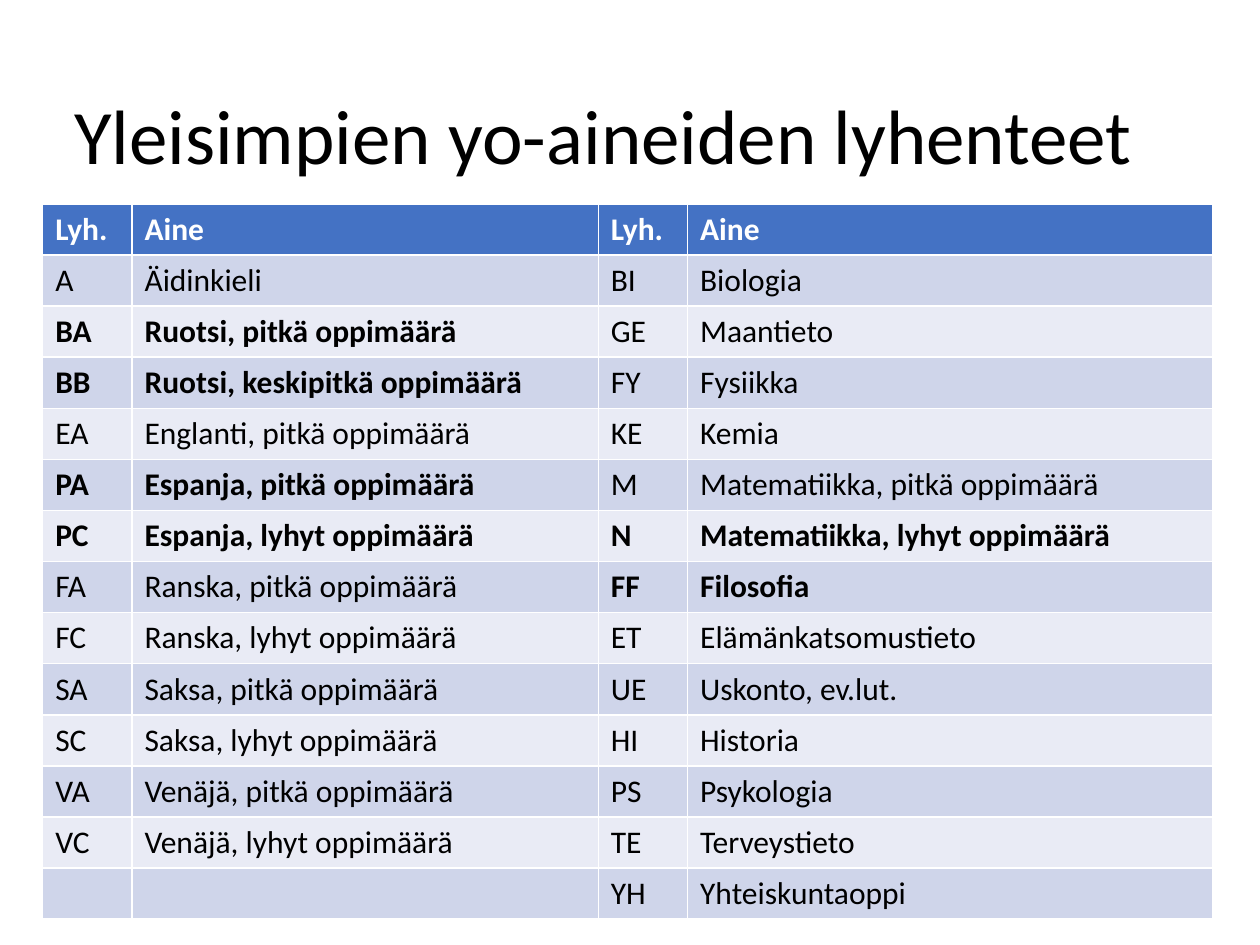
from dataclasses import dataclass

from pptx import Presentation
from pptx.dml.color import RGBColor
from pptx.enum.text import MSO_ANCHOR, MSO_AUTO_SIZE, PP_ALIGN
from pptx.util import Cm, Pt


@dataclass(frozen=True)
class Theme:
    font: str = "Calibri"
    title_size: int = 44
    table_size: int = 18
    text: str = "000000"
    header_text: str = "FFFFFF"
    header_fill: str = "4472C4"
    bands: tuple[str, str] = ("CFD5EA", "E9EBF5")


@dataclass(frozen=True)
class Subject:
    code: str
    name: str
    bold: bool = False


THEME = Theme()
HEADER = Subject("Lyh.", "Aine", True)
COLUMN_WIDTHS = (1.8, 9.4, 1.8, 10.59)
ROW_HEIGHT = 1.03

LANGUAGES = [
    Subject("A", "Äidinkieli"),
    Subject("BA", "Ruotsi, pitkä oppimäärä", True),
    Subject("BB", "Ruotsi, keskipitkä oppimäärä", True),
    Subject("EA", "Englanti, pitkä oppimäärä"),
    Subject("PA", "Espanja, pitkä oppimäärä", True),
    Subject("PC", "Espanja, lyhyt oppimäärä", True),
    Subject("FA", "Ranska, pitkä oppimäärä"),
    Subject("FC", "Ranska, lyhyt oppimäärä"),
    Subject("SA", "Saksa, pitkä oppimäärä"),
    Subject("SC", "Saksa, lyhyt oppimäärä"),
    Subject("VA", "Venäjä, pitkä oppimäärä"),
    Subject("VC", "Venäjä, lyhyt oppimäärä"),
]
SCIENCES = [
    Subject("BI", "Biologia"),
    Subject("GE", "Maantieto"),
    Subject("FY", "Fysiikka"),
    Subject("KE", "Kemia"),
    Subject("M", "Matematiikka, pitkä oppimäärä"),
    Subject("N", "Matematiikka, lyhyt oppimäärä", True),
    Subject("FF", "Filosofia", True),
    Subject("ET", "Elämänkatsomustieto"),
    Subject("UE", "Uskonto, ev.lut."),
    Subject("HI", "Historia"),
    Subject("PS", "Psykologia"),
    Subject("TE", "Terveystieto"),
    Subject("YH", "Yhteiskuntaoppi"),
]


def style_font(font, size: int, color: str, bold: bool = False) -> None:
    font.name = THEME.font
    font.size = Pt(size)
    font.bold = bold
    font.color.rgb = RGBColor.from_string(color)


def add_title(page, text: str) -> None:
    box = page.shapes.title
    box.left, box.top, box.width, box.height = Cm(1.24), Cm(1.73), Cm(22.86), Cm(2.16)
    frame = box.text_frame
    frame.text = text
    frame.auto_size = MSO_AUTO_SIZE.NONE
    frame.vertical_anchor = MSO_ANCHOR.MIDDLE
    para = frame.paragraphs[0]
    para.alignment = PP_ALIGN.LEFT
    para.line_spacing = 0.9
    style_font(para.font, THEME.title_size, THEME.text)


def fill_cell(cell, text: str, fill: str, color: str, bold: bool) -> None:
    cell.fill.solid()
    cell.fill.fore_color.rgb = RGBColor.from_string(fill)
    if text:
        cell.text = text
        style_font(cell.text_frame.paragraphs[0].font, THEME.table_size, color, bold)


def add_subject_table(page, halves: list[list[Subject]]) -> None:
    row_count = 1 + max(len(half) for half in halves)
    table = page.shapes.add_table(
        row_count, len(COLUMN_WIDTHS), Cm(0.86), Cm(4.11),
        Cm(sum(COLUMN_WIDTHS)), Cm(ROW_HEIGHT * row_count),
    ).table
    for column, width in zip(table.columns, COLUMN_WIDTHS):
        column.width = Cm(width)

    # Each half holds a code column and a name column
    for half_index, half in enumerate(halves):
        padding = [Subject("", "")] * (row_count - 1 - len(half))
        for row, subject in enumerate([HEADER, *half, *padding]):
            fill = THEME.bands[(row - 1) % 2] if row else THEME.header_fill
            color = THEME.text if row else THEME.header_text
            for offset, text in enumerate((subject.code, subject.name)):
                cell = table.cell(row, 2 * half_index + offset)
                fill_cell(cell, text, fill, color, subject.bold)


def main() -> None:
    deck = Presentation()
    deck.slide_width, deck.slide_height = Cm(25.4), Cm(19.05)
    page = deck.slides.add_slide(deck.slide_layouts[5])  # title only
    add_title(page, "Yleisimpien yo-aineiden lyhenteet")
    add_subject_table(page, [LANGUAGES, SCIENCES])
    deck.save("out.pptx")


if __name__ == "__main__":
    main()
